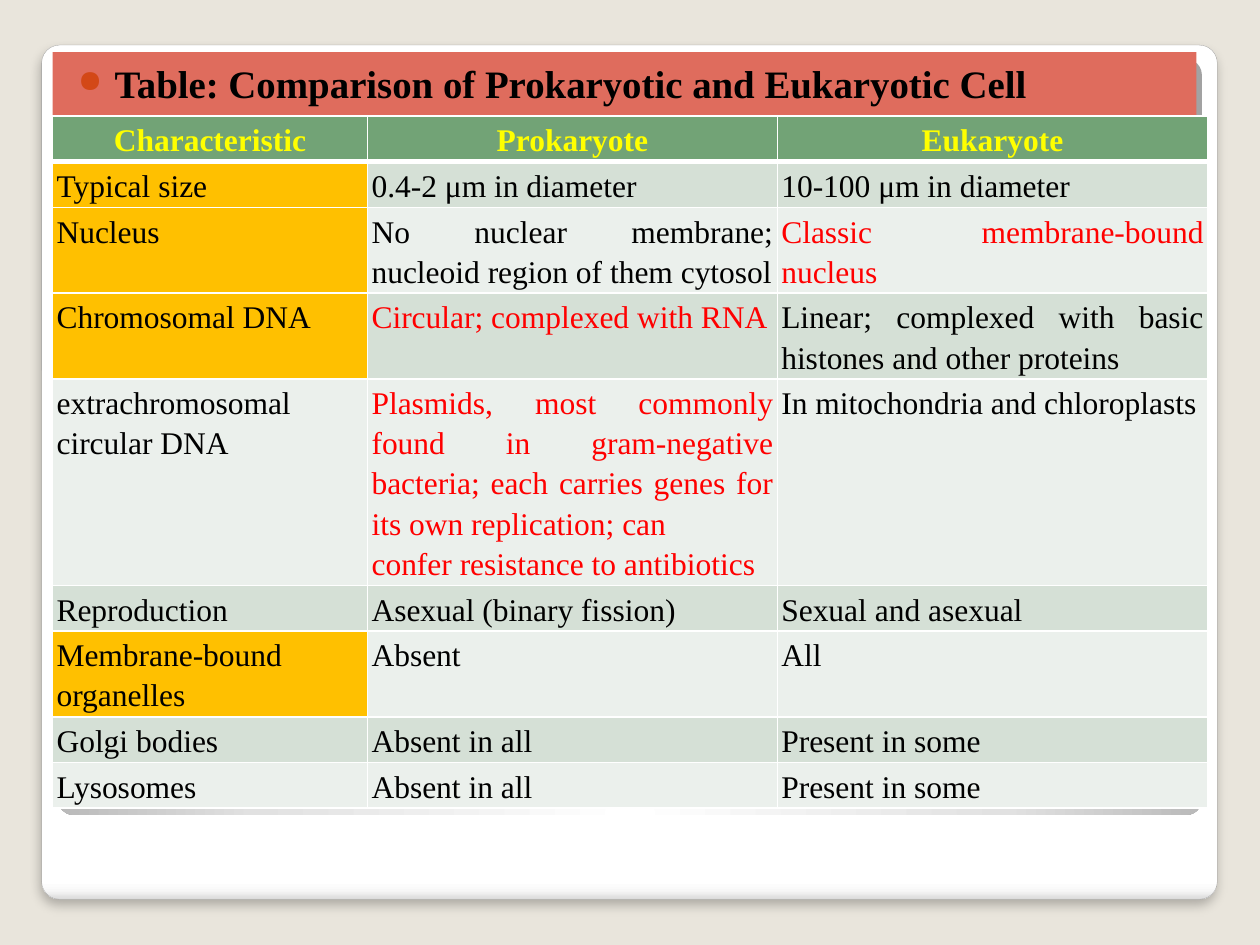
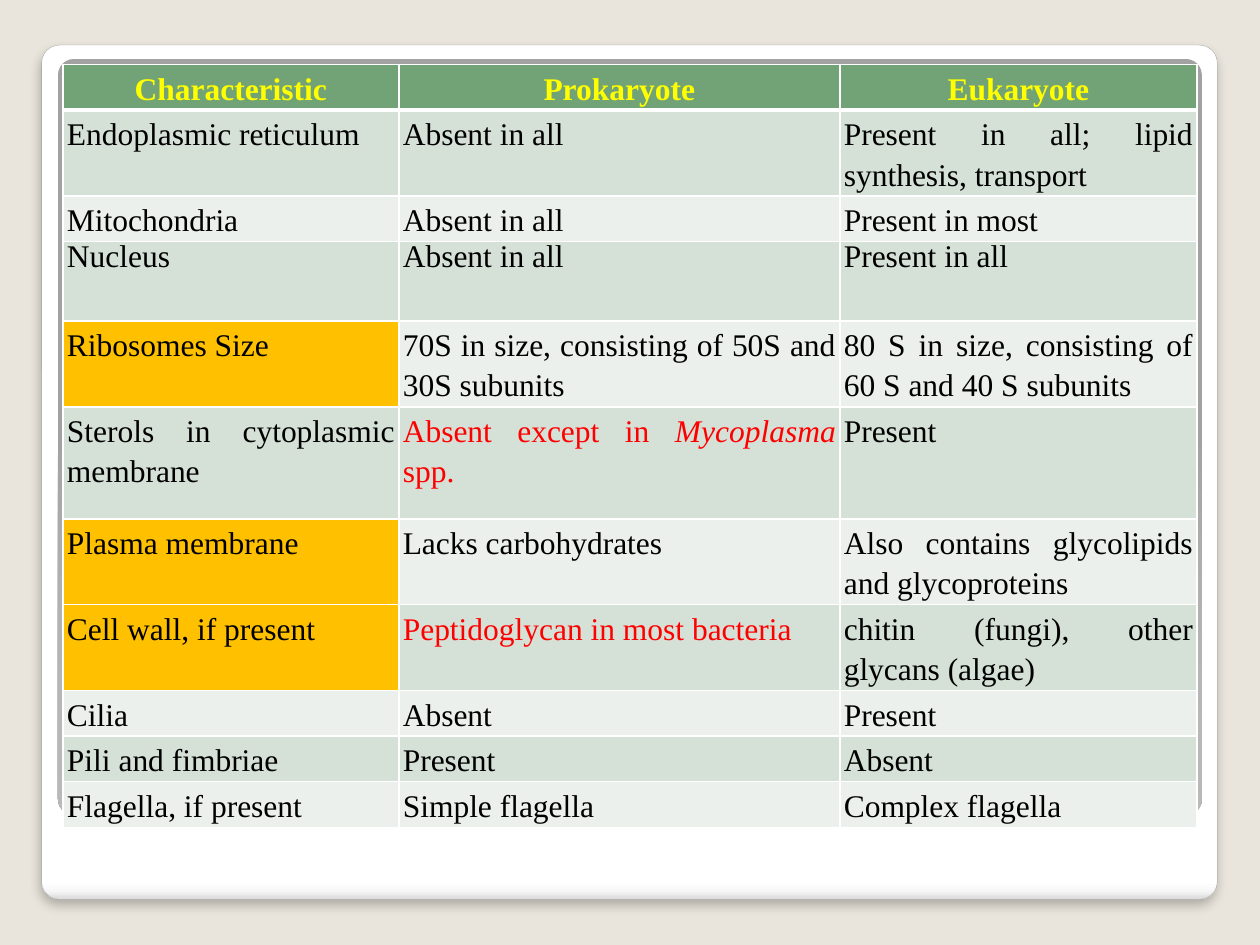
from lxml.etree import SubElement
from pptx import Presentation
from pptx.dml.color import RGBColor
from pptx.enum.shapes import MSO_SHAPE
from pptx.enum.text import MSO_ANCHOR, PP_ALIGN
from pptx.oxml import parse_xml
from pptx.oxml.ns import nsdecls, qn
from pptx.util import Cm, Pt

FONT = "Times New Roman"
BACKGROUND, TITLE_BAND, BULLET = "E9E5DC", "DF6C5D", "D34817"
HEADER, GOLD, BANDS = "72A376", "FFC000", ("EBF0EC", "D5E0D6")
BLACK, WHITE, RED, YELLOW = "000000", "FFFFFF", "FF0000", "FFFF00"
ONE_LINE, TWO_LINES, FIVE_LINES = 0.92, 1.73, 4.16

HEADINGS = ("Characteristic", "Prokaryote", "Eukaryote")
GENERAL_ROWS = [
    (ONE_LINE, "Typical size", "0.4-2 μm in diameter", "10-100 μm in diameter"),
    (TWO_LINES, "Nucleus", "No nuclear membrane; nucleoid region of them cytosol",
     "Classic membrane-bound nucleus"),
    (TWO_LINES, "Chromosomal DNA", "Circular; complexed with RNA",
     "Linear; complexed with basic histones and other proteins"),
    (FIVE_LINES, "extrachromosomal\ncircular DNA",
     "Plasmids, most commonly found in gram-negative bacteria; each carries genes "
     "for its own replication; can\nconfer resistance to antibiotics",
     "In mitochondria and chloroplasts"),
    (ONE_LINE, "Reproduction", "Asexual (binary fission)", "Sexual and asexual"),
    (TWO_LINES, "Membrane-bound organelles", "Absent", "All"),
    (ONE_LINE, "Golgi bodies", "Absent in all", "Present in some"),
    (ONE_LINE, "Lysosomes", "Absent in all", "Present in some"),
]
STRUCTURE_ROWS = [
    (TWO_LINES, "Endoplasmic reticulum", "Absent in all",
     "Present in all; lipid synthesis, transport"),
    (ONE_LINE, "Mitochondria", "Absent in all", "Present in most"),
    (1.6, "Nucleus", "Absent in all", "Present in all"),
    (TWO_LINES, "Ribosomes Size", "70S in size, consisting of 50S and 30S subunits",
     "80 S in size, consisting of 60 S and 40 S subunits"),
    (2.26, "Sterols in cytoplasmic membrane", "Absent except in *Mycoplasma *spp.",
     "Present"),
    (TWO_LINES, "Plasma membrane", "Lacks carbohydrates",
     "Also contains glycolipids and glycoproteins"),
    (TWO_LINES, "Cell wall, if present", "Peptidoglycan in most bacteria",
     "chitin (fungi), other glycans (algae)"),
    (ONE_LINE, "Cilia", "Absent", "Present"),
    (ONE_LINE, "Pili and fimbriae", "Present", "Absent"),
    (ONE_LINE, "Flagella, if present", "Simple flagella", "Complex flagella"),
]


def rgb(color):
    """Turn a hex string into a colour."""
    return RGBColor.from_string(color)


def add_box(s, kind, left, top, width, height):
    """Add a preset shape without line or shadow."""
    sp = s.shapes.add_shape(kind, Cm(left), Cm(top), Cm(width), Cm(height))
    sp.shadow.inherit = False
    sp.line.fill.background()
    return sp


def add_panel(s, left, top, width, height, stops, direction):
    """Add a rounded panel with a gradient fill."""
    sp = add_box(s, MSO_SHAPE.ROUNDED_RECTANGLE, left, top, width, height)
    sp.adjustments[0] = 0.021
    marks = "".join(f'<a:gs pos="{pos * 1000}"><a:srgbClr val="{color}"/></a:gs>'
                    for pos, color in stops)
    gradient = parse_xml(f'<a:gradFill {nsdecls("a")} rotWithShape="1">'
                         f'<a:gsLst>{marks}</a:gsLst>{direction}</a:gradFill>')
    sp._element.spPr.find(qn("a:prstGeom")).addnext(gradient)
    return sp


def add_soft_shadow(sp):
    """Give a shape a blurred shadow below it."""
    effects = sp._element.spPr.find(qn("a:effectLst"))
    effects.append(parse_xml(
        f'<a:outerShdw {nsdecls("a")} blurRad="{Pt(6)}" dist="{Pt(4)}" dir="5400000" '
        f'algn="t" rotWithShape="0"><a:srgbClr val="{BLACK}"><a:alpha val="25000"/>'
        '</a:srgbClr></a:outerShdw>'))


def add_base_slide(prs):
    """Add a slide with the shared background and panels."""
    s = prs.slides.add_slide(prs.slide_layouts[6])
    s.background.fill.solid()
    s.background.fill.fore_color.rgb = rgb(BACKGROUND)
    card = add_panel(s, 0.84, 0.91, 23.7, 17.22,
                     [(0, WHITE), (98, WHITE), (99, "F7F7F7"), (100, "DADADA")],
                     '<a:lin ang="5400000" scaled="0"/>')
    card.line.color.rgb = rgb("A4A4A4")
    card.line.width = Pt(0.16)
    add_soft_shadow(card)
    add_panel(s, 1.17, 1.19, 23.06, 15.24,
              [(0, WHITE), (55, "E1E1E1"), (100, "A2A2A2")],
              '<a:path path="circle"><a:fillToRect l="50000" t="175000" '
              'r="50000" b="-75000"/></a:path>')
    return s


def add_run(p, text, size, color, bold=False, italic=False):
    """Add one formatted run to a paragraph."""
    r = p.add_run()
    r.text = text
    r.font.name, r.font.size = FONT, Pt(size)
    r.font.bold, r.font.italic = bold, italic
    r.font.color.rgb = rgb(color)


def set_margins(box, left, top, right, bottom):
    """Set the inner margins of a cell or text frame."""
    box.margin_left, box.margin_top = Cm(left), Cm(top)
    box.margin_right, box.margin_bottom = Cm(right), Cm(bottom)


def add_title_band(s, text):
    """Add the coloured band with its bulleted title."""
    sp = add_box(s, MSO_SHAPE.RECTANGLE, 1.06, 1.05, 23.06, 1.27)
    sp.fill.solid()
    sp.fill.fore_color.rgb = rgb(TITLE_BAND)
    tf = sp.text_frame
    tf.word_wrap = True
    tf.vertical_anchor = MSO_ANCHOR.TOP
    set_margins(tf, 0.51, 0.25, 0.25, 0.13)
    p = tf.paragraphs[0]
    p.alignment, p.line_spacing, p.space_before = PP_ALIGN.LEFT, 0.9, Pt(2.5)
    pPr = p._p.get_or_add_pPr()
    pPr.set("marL", str(Cm(0.74)))
    pPr.set("indent", str(-Cm(0.74)))
    SubElement(SubElement(pPr, qn("a:buClr")), qn("a:srgbClr"), val=BULLET)
    SubElement(pPr, qn("a:buSzPct"), val="80000")
    SubElement(pPr, qn("a:buChar"), char="●")
    add_run(p, text, 22.2, BLACK, bold=True)


def set_borders(cell, top, bottom):
    """Draw white borders of the given top and bottom weight."""
    tcPr = cell._tc.get_or_add_tcPr()
    for i, (side, weight) in enumerate(zip("LRTB", (1, 1, top, bottom))):
        tcPr.insert(i, parse_xml(
            f'<a:ln{side} {nsdecls("a")} w="{Pt(weight)}"><a:solidFill>'
            f'<a:srgbClr val="{WHITE}"/></a:solidFill></a:ln{side}>'))


def fill_cell(cell, text, fill, color, align, spacing=1.15, bold=False):
    """Write a cell; newlines part paragraphs and asterisks enclose italics."""
    cell.fill.solid()
    cell.fill.fore_color.rgb = rgb(fill)
    set_margins(cell, 0.08, 0.05, 0.08, 0.05)
    tf = cell.text_frame
    for i, line in enumerate(text.split("\n")):
        p = tf.add_paragraph() if i else tf.paragraphs[0]
        p.alignment, p.line_spacing = align, spacing
        for j, part in enumerate(line.split("*")):
            add_run(p, part, 18, color, bold, italic=j % 2 == 1)


def add_comparison(s, left, top, widths, rows, gold, red, label_align, tight=()):
    """Add a comparison table with gold label rows and red cells."""
    heights = [ONE_LINE] + [row[0] for row in rows]
    table = s.shapes.add_table(len(heights), len(widths), Cm(left), Cm(top),
                               Cm(sum(widths)), Cm(sum(heights))).table
    table.first_row = table.horz_banding = False
    for column, width in zip(table.columns, widths):
        column.width = Cm(width)
    for row, height in zip(table.rows, heights):
        row.height = Cm(height)
    for c, heading in enumerate(HEADINGS):
        fill_cell(table.cell(0, c), heading, HEADER, YELLOW, PP_ALIGN.CENTER, bold=True)
        set_borders(table.cell(0, c), 1, 3)
    for i, (_, *texts) in enumerate(rows, 1):
        for c, text in enumerate(texts):
            fill_cell(table.cell(i, c), text,
                      GOLD if c == 0 and i in gold else BANDS[i % 2],
                      RED if (i, c) in red else BLACK,
                      PP_ALIGN.JUSTIFY if c else label_align,
                      Pt(17.4) if i in tight else 1.15)
            set_borders(table.cell(i, c), 3 if i == 1 else 1, 1)


def main():
    """Build both slides and save them."""
    prs = Presentation()
    prs.slide_width, prs.slide_height = Cm(25.4), Cm(19.05)
    s = add_base_slide(prs)
    add_comparison(s, 1.06, 2.34, (6.35, 8.26, 8.68), GENERAL_ROWS,
                   gold={1, 2, 3, 6}, red={(2, 2), (3, 1), (4, 1)},
                   label_align=PP_ALIGN.LEFT)
    add_title_band(s, "Table: Comparison of Prokaryotic and Eukaryotic Cell")
    s = add_base_slide(prs)
    add_comparison(s, 1.27, 1.3, (6.77, 8.89, 7.2), STRUCTURE_ROWS,
                   gold={4, 6, 7}, red={(5, 1), (7, 1)},
                   label_align=PP_ALIGN.JUSTIFY, tight={3})
    prs.save("out.pptx")


if __name__ == "__main__":
    main()
